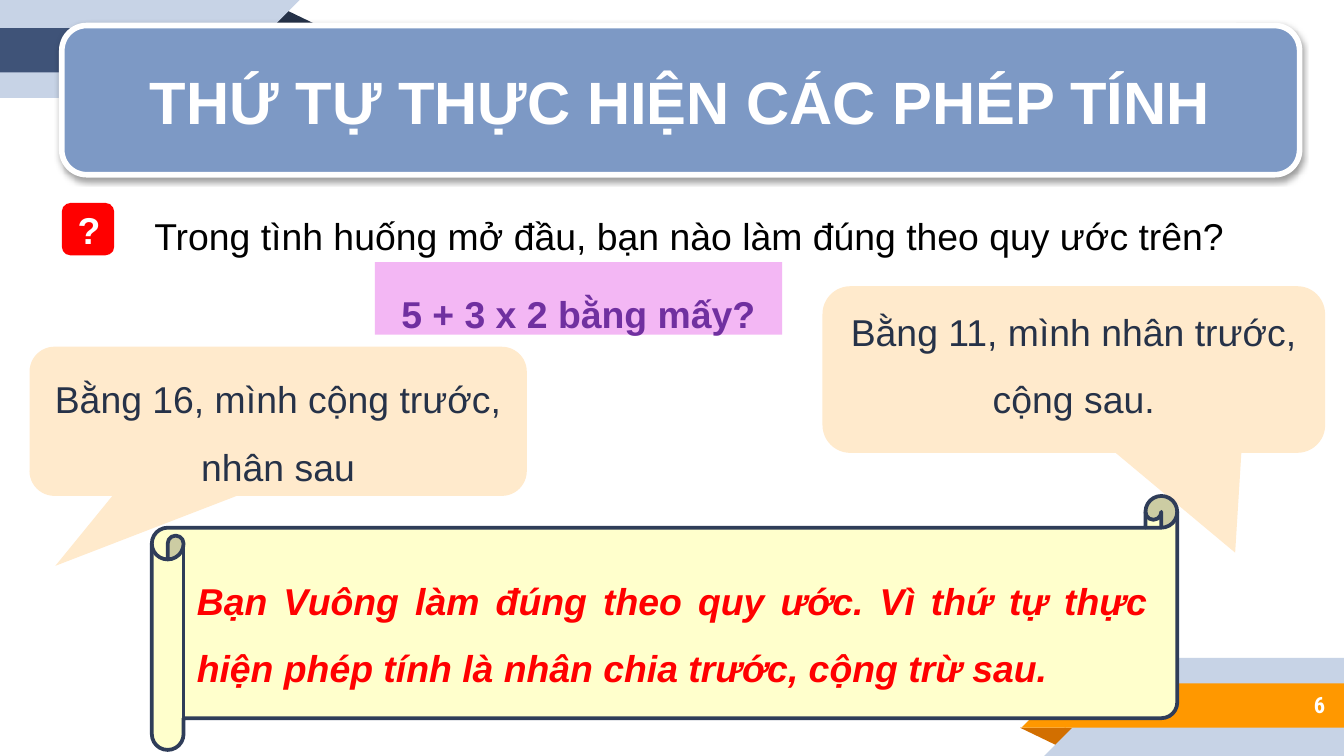
from lxml.etree import SubElement
from pptx import Presentation
from pptx.dml.color import RGBColor
from pptx.enum.shapes import MSO_SHAPE as Geo
from pptx.enum.text import MSO_ANCHOR as Anchor, MSO_AUTO_SIZE as Auto, PP_ALIGN as Align
from pptx.oxml.ns import qn
from pptx.util import Inches, Pt

WIDE = 10
HIGH = WIDE * 9 / 16
HUES = {
    "white": "FFFFFF", "black": "000000", "red": "FF0000", "pale": "C7D3E6",
    "navy": "3F5378", "dark": "263248", "orange": "FF9800", "rust": "D26F00",
    "blue": "7D99C5", "pink": "F3B7F4", "purple": "7030A0", "peach": "FFEACC",
    "cream": "FFFFCC", "edge": "2F3D59",
}


def hue(name):
    return RGBColor.from_string(HUES[name])


def place(shape, box):
    for key, val in zip(("left", "top", "width", "height"), box):
        setattr(shape, key, Inches(val))


def paint(shape, fill, line=None, thick=0):
    shape.fill.solid()
    shape.fill.fore_color.rgb = hue(fill)
    if line:
        shape.line.color.rgb = hue(line)
        shape.line.width = Pt(thick)
    else:
        shape.line.fill.background()


def draw(slide, geo, box, fill, line=None, thick=0, adj=(), turn=0):
    shape = slide.shapes.add_shape(geo, *map(Inches, box))
    shape.shadow.inherit = False
    shape.rotation = turn
    for i, val in enumerate(adj):
        shape.adjustments[i] = val
    paint(shape, fill, line, thick)
    return shape


def write(shape, text, color, align=Align.CENTER, space=1.5, anchor=Anchor.MIDDLE,
          inset=None, **font):
    frame = shape.text_frame
    look = {"word_wrap": True, "auto_size": Auto.NONE, "vertical_anchor": anchor}
    for side, val in (inset or {}).items():
        look["margin_" + side] = Inches(val)
    for key, val in look.items():
        setattr(frame, key, val)
    par = frame.paragraphs[0]
    par.alignment, par.line_spacing = align, space
    run = par.add_run()
    run.text = text
    run.font.color.rgb = hue(color)
    for key, val in {"name": "Arial", "size": Pt(20), **font}.items():
        setattr(run.font, key, val)


def note(slide, box, text, color, fill=None, **look):
    label = slide.shapes.add_textbox(*map(Inches, box))
    if fill:
        paint(label, fill)
    write(label, text, color, anchor=Anchor.TOP, **look)


def ribbon(slide, box, fold, band, turn=0):
    """Corner ribbon; a turn of 180 mirrors it through its centre."""
    x, y, w, h = box
    parts = (
        (Geo.ISOSCELES_TRIANGLE, (1.98, 0.07, 0.43, 0.14), fold, [0.324], 0),
        (Geo.RECTANGLE, (0, 0, 1.51, 0.73), "pale", [], 0),
        (Geo.RIGHT_TRIANGLE, (1.5, 0, 0.73, 0.73), "pale", [], 90),
        (Geo.RECTANGLE, (0, 0.21, 2.08, 0.33), band, [], 0),
        (Geo.RIGHT_TRIANGLE, (2.07, 0.21, 0.33, 0.33), band, [], 90),
    )
    for geo, (dx, dy, pw, ph), fill, adj, spin in parts:
        if turn:
            dx, dy = w - dx - pw, h - dy - ph
        draw(slide, geo, (x + dx, y + dy, pw, ph), fill, adj=adj, turn=spin + turn)


def banner(slide, box):
    panel = draw(slide, Geo.ROUNDED_RECTANGLE, box, "blue", "white", 3)
    # Soft shadow below the panel
    glow = SubElement(panel._element.spPr.find(qn("a:effectLst")), qn("a:outerShdw"),
                      blurRad=str(Pt(3.1)), dist=str(Pt(1.6)), dir="5400000",
                      rotWithShape="0")
    tint = SubElement(glow, qn("a:srgbClr"), val=HUES["black"])
    SubElement(tint, qn("a:alpha"), val="38000")
    # Title on top of the panel
    title = slide.shapes.title
    place(title, box)
    write(title, "THỨ TỰ THỰC HIỆN CÁC PHÉP TÍNH", "white", space=1, size=Pt(32), bold=True)
    panel._element.addnext(title._element)


def question(slide, box):
    x, y, w, h = box
    badge = draw(slide, Geo.ROUNDED_RECTANGLE, (x, y + 0.14, 0.39, 0.39), "red")
    write(badge, "?", "white", space=1, bold=True)
    note(slide, (x + 0.59, y, w - 0.59, h),
         "Trong tình huống mở đầu, bạn nào làm đúng theo quy ước trên?",
         "black", align=Align.JUSTIFY)


def bubble(slide, box, text, tail, inset=None):
    shape = draw(slide, Geo.ROUNDED_RECTANGULAR_CALLOUT, box, "peach", adj=(*tail, 0.167))
    write(shape, text, "dark", inset=inset)


def answer(slide, box):
    scroll = draw(slide, Geo.HORIZONTAL_SCROLL, box, "cream", "edge", 2)
    write(scroll, "Bạn Vuông làm đúng theo quy ước. Vì thứ tự thực hiện phép tính "
          "là nhân chia trước, cộng trừ sau.", "red", align=Align.JUSTIFY,
          bold=True, italic=True)


def main():
    deck = Presentation()
    deck.slide_width, deck.slide_height = Inches(WIDE), Inches(HIGH)
    slide = deck.slides.add_slide(deck.slide_layouts[5])

    # Corner ribbons and page number
    w, h = 2.4, 0.73
    ribbon(slide, (0, 0, w, h), "dark", "navy")
    ribbon(slide, (WIDE - w, HIGH - h, w, h), "rust", "orange", 180)
    page = slide.shapes.add_textbox(*map(Inches, (8.33, 5.07, 1.63, 0.35)))
    write(page, "6", "white", align=Align.RIGHT, space=1,
          inset=dict.fromkeys(("left", "top", "right", "bottom"), 0.1),
          name="Roboto Condensed", size=Pt(12), bold=True)

    # Heading and question
    banner(slide, (0.46, 0.19, 9.21, 1.11))
    question(slide, (0.46, 1.37, 9.26, 0.61))
    note(slide, (2.79, 1.95, 3.03, 0.54), "5 + 3 x 2 bằng mấy?", "purple", "pink", bold=True)

    # Two replies and the answer
    bubble(slide, (0.22, 2.58, 3.7, 1.11), "Bằng 16, mình cộng trước, nhân sau",
           (-0.448, 0.969))
    bubble(slide, (6.12, 2.13, 3.74, 1.24), "Bằng 11, mình nhân trước, cộng sau.",
           (0.321, 1.099), {"bottom": 0.28})
    answer(slide, (1.13, 3.69, 7.63, 1.89))
    deck.save("out.pptx")


if __name__ == "__main__":
    main()
